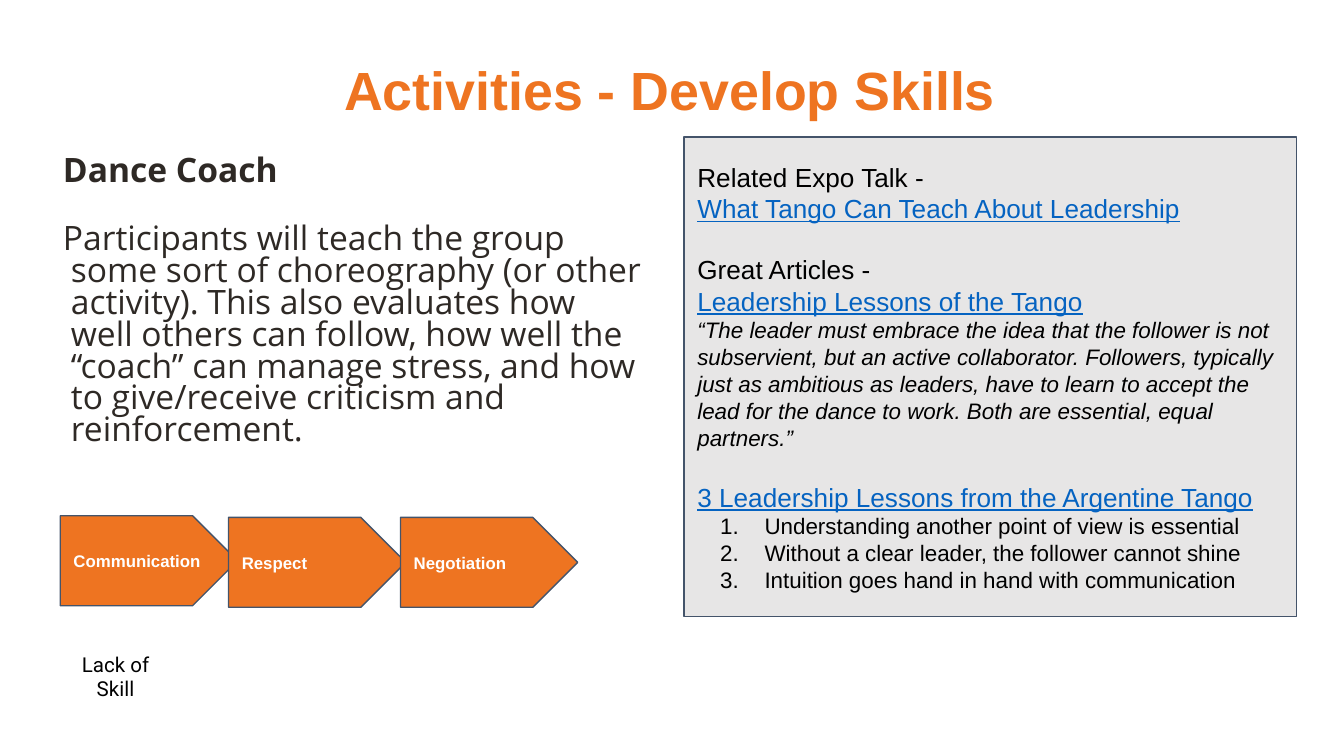
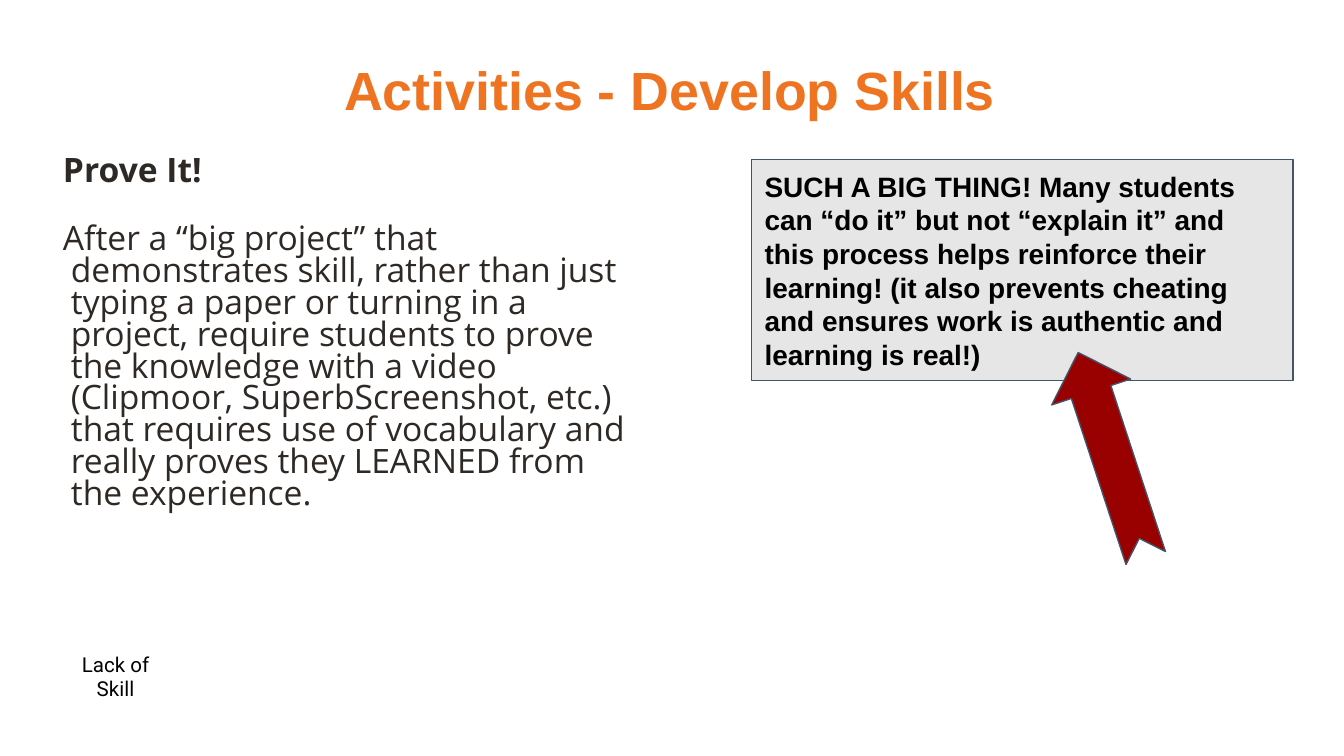
from pptx import Presentation
from pptx.dml.color import RGBColor
from pptx.enum.shapes import MSO_SHAPE as Kind
from pptx.enum.text import MSO_ANCHOR as Anchor, MSO_AUTO_SIZE as Fit, PP_ALIGN as Align
from pptx.oxml.ns import qn
from pptx.util import Cm, Pt
from lxml.etree import SubElement


def tint(code):
    return RGBColor.from_string(code)


def place(item, left, top, width, height):
    item.left, item.top = Cm(left), Cm(top)
    item.width, item.height = Cm(width), Cm(height)


def mark(par, left, first, number=False):
    """Set the indents in centimetres and number the paragraph or clear its bullet."""
    props = par._p.get_or_add_pPr()
    props.set("marL", str(Cm(left)))
    props.set("indent", str(Cm(first)))
    if number:
        SubElement(props, qn("a:buAutoNum"), type="arabicPeriod")
    else:
        SubElement(props, qn("a:buNone"))


class Deck:
    orange, ink, black, white = "EE7421", "2E2925", "000000", "FFFFFF"
    gray, edge, blue, red = "E7E6E6", "44546A", "0563C1", "990000"
    sans, body_font, tag_font = "Arial", "Open Sans", "Roboto"

    def __init__(self):
        self.prs = Presentation()
        self.prs.slide_width, self.prs.slide_height = Cm(25.4), Cm(14.29)
        self.slide = None

    def style(self, par, size, color, face=sans, bold=False, italic=False, line=False):
        font = par.font
        font.name, font.size, font.color.rgb = face, Pt(size), tint(color)
        font.bold, font.italic, font.underline = bold, italic, line

    def frame(self, item, anchor, pad=0.25, right=0.25, fit=Fit.NONE):
        text = item.text_frame
        text.word_wrap, text.auto_size = True, fit
        text.vertical_anchor = anchor
        text.margin_left, text.margin_right = Cm(0.25), Cm(right)
        text.margin_top = text.margin_bottom = Cm(pad)
        return text

    def start(self, head, story, height):
        """Add a slide with the shared title, a headed story and the corner tag."""
        self.slide = self.prs.slides.add_slide(self.prs.slide_layouts[1])
        self.title("Activities - Develop Skills")
        self.body(head, story, height)
        self.tag("Lack of Skill")

    def title(self, words):
        item = self.slide.shapes.title
        place(item, 0.61, 1.02, 24.1, 1.42)
        par = self.frame(item, Anchor.BOTTOM, 0.13).paragraphs[0]
        par.text, par.alignment, par.line_spacing = words, Align.CENTER, 0.9
        self.style(par, 28.8, self.orange, bold=True)

    def body(self, head, story, height):
        item = self.slide.placeholders[1]
        place(item, 0.61, 2.84, 11.73, height)
        text = self.frame(item, Anchor.TOP, 0.13, 0.18)
        text.text = f"{head}\n{story}"
        for par, bold, gap in zip(text.paragraphs, (True, False), (0, 19.4)):
            mark(par, 0.48, -0.15)
            par.line_spacing, par.space_before = 0.79, Pt(gap)
            self.style(par, 18, self.ink, self.body_font, bold)

    def tag(self, words):
        item = self.slide.shapes.add_textbox(Cm(1.04), Cm(12.07), Cm(2.29), Cm(1.45))
        par = self.frame(item, Anchor.TOP, fit=Fit.SHAPE_TO_FIT_TEXT).paragraphs[0]
        par.text, par.alignment = words, Align.CENTER
        self.style(par, 11, self.black, self.tag_font)

    def shape(self, kind, box, fill):
        item = self.slide.shapes.add_shape(kind, *map(Cm, box))
        item.shadow.inherit = False
        item.fill.solid()
        item.fill.fore_color.rgb = tint(fill)
        item.line.color.rgb, item.line.width = tint(self.edge), Pt(0.75)
        return item

    def note(self, kind, box, fill, rows):
        """Add a shape whose rows are (text, style, gap before, numbered)."""
        text = self.frame(self.shape(kind, box, fill), Anchor.MIDDLE)
        text.text = "\n".join(row[0] for row in rows)
        for par, (_, look, gap, number) in zip(text.paragraphs, rows):
            if number:
                mark(par, 1.27, -0.84, True)
            par.alignment, par.space_before = Align.LEFT, Pt(gap)
            self.style(par, **look)

    def arrow(self, box, turn):
        self.shape(Kind.NOTCHED_RIGHT_ARROW, box, self.red).rotation = turn


def coach(deck):
    deck.start(
        "Dance Coach",
        "Participants will teach the group some sort of choreography (or other activity). "
        "This also evaluates how well others can follow, how well the “coach” can manage "
        "stress, and how to give/receive criticism and reinforcement.", 6.55)
    plain = dict(size=14, color=deck.black)
    link = dict(size=14, color=deck.blue, line=True)
    quote = dict(size=12, color=deck.black, italic=True)
    small = dict(size=12, color=deck.black)
    gap = 16.1
    deck.note(Kind.RECTANGLE, (12.93, 2.59, 11.58, 9.07), deck.gray, [
        ("Related Expo Talk -", plain, 0, False),
        ("What Tango Can Teach About Leadership", link, 0, False),
        ("Great Articles -", plain, gap, False),
        ("Leadership Lessons of the Tango", link, 0, False),
        ("“The leader must embrace the idea that the follower is not subservient, but an "
         "active collaborator. Followers, typically just as ambitious as leaders, have to "
         "learn to accept the lead for the dance to work. Both are essential, equal "
         "partners.”", quote, 0, False),
        ("3 Leadership Lessons from the Argentine Tango", link, gap, False),
        ("Understanding another point of view is essential", small, 0, True),
        ("Without a clear leader, the follower cannot shine", small, 0, True),
        ("Intuition goes hand in hand with communication", small, 0, True),
    ])
    step = dict(size=9, color=deck.white, bold=True)
    for word, left, top in (("Communication", 1.14, 9.75), ("Respect", 4.32, 9.78),
                            ("Negotiation", 7.57, 9.78)):
        deck.note(Kind.PENTAGON, (left, top, 3.35, 1.7), deck.orange,
                  [(word, step, 0, False)])


def prove(deck):
    deck.start(
        "Prove It!",
        "After a “big project” that demonstrates skill, rather than just typing a paper or "
        "turning in a project, require students to prove the knowledge with a video "
        "(Clipmoor, SuperbScreenshot, etc.) that requires use of vocabulary and really "
        "proves they LEARNED from the experience.", 8.18)
    loud = dict(size=15, color=deck.black, bold=True)
    deck.note(Kind.RECTANGLE, (14.2, 3.02, 10.24, 4.17), deck.gray, [
        ("SUCH A BIG THING! Many students can “do it” but not “explain it” and this "
         "process helps reinforce their learning! (it also prevents cheating and ensures "
         "work is authentic and learning is real!)", loud, 0, False)])
    deck.arrow((18.97, 7.82, 4.09, 1.57), 251.8)


def main():
    deck = Deck()
    coach(deck)
    prove(deck)
    deck.prs.save("out.pptx")


if __name__ == "__main__":
    main()
